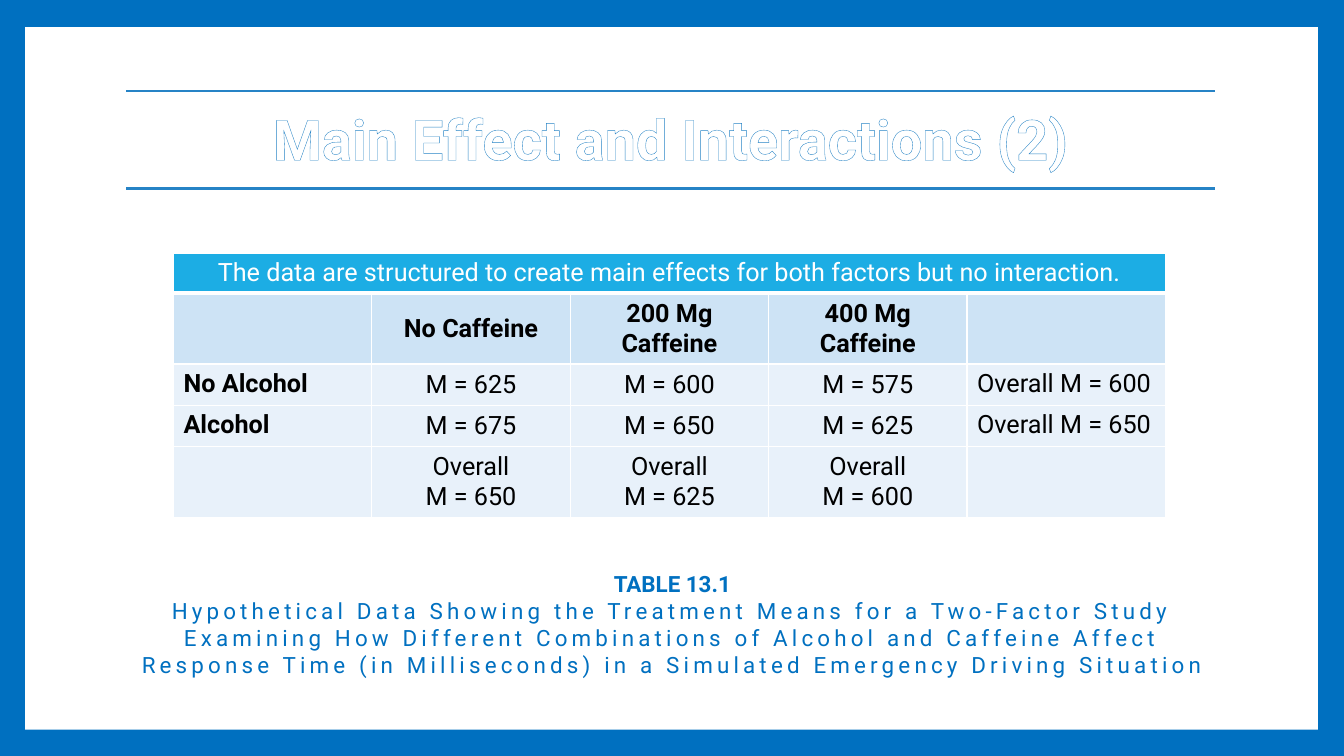
from copy import deepcopy
from dataclasses import dataclass

from lxml import etree
from pptx import Presentation
from pptx.dml.color import RGBColor
from pptx.enum.shapes import MSO_CONNECTOR, MSO_SHAPE
from pptx.enum.text import MSO_ANCHOR, PP_ALIGN
from pptx.oxml.ns import qn
from pptx.util import Inches, Pt

LINE = MSO_CONNECTOR.STRAIGHT
RECT = MSO_SHAPE.RECTANGLE
TOP, MIDDLE = MSO_ANCHOR.TOP, MSO_ANCHOR.MIDDLE
LEFT, CENTER = PP_ALIGN.LEFT, PP_ALIGN.CENTER


@dataclass(frozen=True)
class Theme:
    font: str = "Roboto"
    blue: str = "0070C0"
    rule: str = "2683C6"
    band: str = "1CADE4"
    head: str = "CDE3F5"
    pale: str = "E8F1FA"
    white: str = "FFFFFF"
    black: str = "000000"
    title: int = 40
    body: int = 18
    note: int = 16


THEME = Theme()

BANNER = "The data are structured to create main effects for both factors but no interaction."
ROWS = [
    ["", "No Caffeine", "200 Mg\nCaffeine", "400 Mg\nCaffeine", ""],
    ["No Alcohol", "M = 625", "M = 600", "M = 575", "Overall M = 600"],
    ["Alcohol", "M = 675", "M = 650", "M = 625", "Overall M = 650"],
    ["", "Overall\nM = 650", "Overall\nM = 625", "Overall\nM = 600", ""],
]
HEIGHTS = [0.39, 0.7, 0.41, 0.41, 0.7]
CAPTION = (
    "Hypothetical Data Showing the Treatment Means for a Two-Factor Study "
    "Examining How Different Combinations of Alcohol and Caffeine Affect "
    "Response Time (in Milliseconds) in a Simulated Emergency Driving Situation"
)


def rgb(color):
    return RGBColor.from_string(color)


def stroke(tag, color, width):
    line = etree.Element(qn(tag), w=str(int(Pt(width))))
    fill = etree.SubElement(line, qn("a:solidFill"))
    etree.SubElement(fill, qn("a:srgbClr"), val=color)
    return line


def write(par, text, size=THEME.body, color=THEME.black, bold=False,
          align=CENTER, space=0, edge=None):
    par.alignment = align
    run = par.add_run()
    run.text = text
    font = run.font
    font.name, font.size, font.bold = THEME.font, Pt(size), bold
    font.color.rgb = rgb(color)
    props = run._r.get_or_add_rPr()
    if space:
        props.set("spc", str(space * 100))
    if edge:
        props.insert(0, stroke("a:ln", edge, 0.52))
    return run


def add_frame(slide):
    slide.background.fill.solid()
    slide.background.fill.fore_color.rgb = rgb(THEME.blue)
    panel = slide.shapes.add_shape(
        RECT, Inches(0.25), Inches(0.27), Inches(12.82), Inches(6.97))
    panel.shadow.inherit = False
    panel.fill.solid()
    panel.fill.fore_color.rgb = rgb(THEME.white)
    panel.line.fill.background()
    slide.shapes._spTree.insert(2, panel._element)


def add_title(slide, text):
    title = slide.shapes.title
    title.left, title.top = Inches(1.25), Inches(0.67)
    title.width, title.height = Inches(10.8), Inches(1.48)
    frame = title.text_frame
    frame.vertical_anchor = MIDDLE
    par = frame.paragraphs[0]
    par.line_spacing = 0.9
    write(par, text, size=THEME.title, color=THEME.white, bold=True,
          edge=THEME.rule)


def add_rule(slide, y):
    rule = slide.shapes.add_connector(
        LINE, Inches(1.25), Inches(y), Inches(12.05), Inches(y))
    rule.line.color.rgb = rgb(THEME.rule)
    rule.line.width = Pt(1.5)
    etree.SubElement(rule._element.spPr, qn("a:effectLst"))


def add_note(slide, head, text):
    box = slide.shapes.add_textbox(
        Inches(1.03), Inches(5.61), Inches(11.23), Inches(1.18))
    frame = box.text_frame
    frame.word_wrap = True
    par = frame.paragraphs[0]
    par._p.get_or_add_pPr().set("marL", str(int(Inches(0.05))))
    run = write(par, head, size=THEME.note, color=THEME.blue, bold=True)
    par.add_line_break()
    par._p[-1].append(deepcopy(run._r.rPr))
    write(par, text, size=THEME.note, color=THEME.blue, space=3)


def style_cell(cell, fill, top=1, base=1):
    props = cell._tc.get_or_add_tcPr()
    for side, width in zip("LRTB", (1, 1, top, base)):
        props.append(stroke(f"a:ln{side}", THEME.white, width))
    cell.fill.solid()
    cell.fill.fore_color.rgb = rgb(fill)


def fill_cell(cell, text, anchor=MIDDLE, **style):
    cell.vertical_anchor = anchor
    frame = cell.text_frame
    for i, line in enumerate(text.split("\n")):
        par = frame.add_paragraph() if i else frame.paragraphs[0]
        write(par, line, **style)


def add_grid(slide):
    count = len(ROWS[0])
    table = slide.shapes.add_table(
        len(HEIGHTS), count, Inches(1.72), Inches(2.51),
        Inches(9.84), Inches(sum(HEIGHTS))).table
    table.first_row = table.horz_banding = False
    for row, height in zip(table.rows, HEIGHTS):
        row.height = Inches(height)
    for c in range(count):
        style_cell(table.cell(0, c), THEME.band, base=3)
    table.cell(0, 0).merge(table.cell(0, count - 1))
    fill_cell(table.cell(0, 0), BANNER, color=THEME.white)
    for r, row in enumerate(ROWS, 1):
        head = r == 1
        for c, text in enumerate(row):
            cell = table.cell(r, c)
            style_cell(cell, THEME.head if head else THEME.pale,
                       top=3 if head else 1)
            if text:
                side = c in (0, count - 1)
                fill_cell(cell, text, anchor=TOP if side else MIDDLE,
                          align=LEFT if side else CENTER,
                          bold=head or c == 0)


def main():
    deck = Presentation()
    deck.slide_width, deck.slide_height = Inches(13.33), Inches(7.5)
    slide = deck.slides.add_slide(deck.slide_layouts[5])
    add_frame(slide)
    add_title(slide, "Main Effect and Interactions (2)")
    for y in (1.87, 0.9):
        add_rule(slide, y)
    add_note(slide, "TABLE 13.1", CAPTION)
    add_grid(slide)
    deck.save("out.pptx")


if __name__ == "__main__":
    main()
